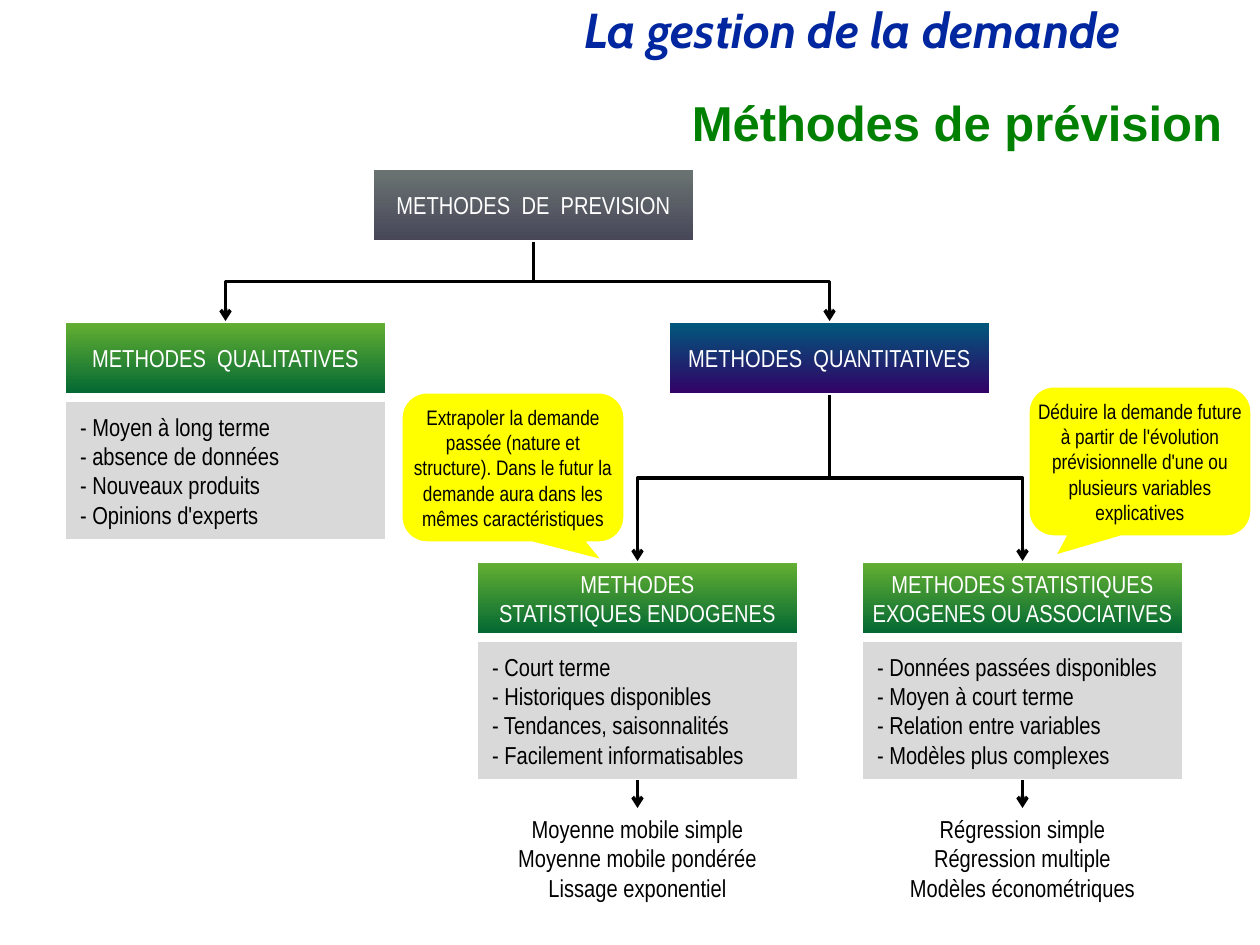
import pptx
import pptx.dml.color
import pptx.enum.shapes
import pptx.enum.text
import pptx.oxml.ns
import pptx.util
from dataclasses import dataclass
from lxml import etree

HEADER = "La gestion de la demande"
TITLE = "Méthodes de prévision"
NODES = {
    "root": dict(at=(372, 168), ramp="grey", head=["METHODES  DE  PREVISION"]),
    "qualitative": dict(
        at=(64, 321), ramp="green", head=["METHODES  QUALITATIVES"],
        details=["- Moyen à long terme", "- absence de données",
                 "- Nouveaux produits", "- Opinions d'experts"]),
    "quantitative": dict(at=(668, 321), ramp="blue", head=["METHODES  QUANTITATIVES"]),
    "endogenous": dict(
        at=(476, 561), ramp="green", head=["METHODES", "STATISTIQUES ENDOGENES"],
        details=["- Court terme", "- Historiques disponibles",
                 "- Tendances, saisonnalités", "- Facilement informatisables"],
        techniques=["Moyenne mobile simple\vMoyenne mobile pondérée", "Lissage exponentiel"]),
    "exogenous": dict(
        at=(861, 561), ramp="green",
        head=["METHODES STATISTIQUES", "EXOGENES OU ASSOCIATIVES"],
        details=["- Données passées disponibles", "- Moyen à court terme",
                 "- Relation entre variables", "- Modèles plus complexes"],
        techniques=["Régression simple\vRégression multiple", "Modèles économétriques"]),
}
BRANCHES = [("root", "qualitative"), ("root", "quantitative"),
            ("quantitative", "endogenous"), ("quantitative", "exogenous")]
CALLOUTS = [
    ((1029, 387), (-0.38, 0.63), "Déduire la demande future à partir de l'évolution "
     "prévisionnelle d'une ou plusieurs variables explicatives"),
    ((402, 393), (0.4, 0.62), "Extrapoler la demande passée (nature et structure). Dans le "
     "futur la demande aura dans les mêmes caractéristiques"),
]


@dataclass(frozen=True)
class Theme:
    header: str = "00279F"
    title: str = "008000"
    ink: str = "000000"
    paper: str = "FFFFFF"
    panel: str = "D9D9D9"
    callout: str = "FFFF00"
    grey: tuple = ("6C7472", "464658")
    green: tuple = ("66B132", "006633")
    blue: tuple = ("005A7C", "330066")
    narrow: str = "Arial Narrow"
    heading_size: int = 28
    body_size: int = 14
    note_size: int = 12
    frame: float = 2.25
    thin: float = 0.75
    arrow: float = 2


THEME = Theme()
PX = 914400 / 126
NODE_W, NODE_H = 323, 74
DETAILS_DROP, DETAILS_H = 79, 141
TECHNIQUES_DROP, TECHNIQUES_W, TECHNIQUES_H = 247, 348, 102
ARROW_DROP = 219
CALLOUT_W, CALLOUT_H = 222, 149
CENTER = pptx.enum.text.PP_ALIGN.CENTER
LEFT = pptx.enum.text.PP_ALIGN.LEFT
RIGHT = pptx.enum.text.PP_ALIGN.RIGHT
TOP = pptx.enum.text.MSO_ANCHOR.TOP
MIDDLE = pptx.enum.text.MSO_ANCHOR.MIDDLE


def emu(*lengths):
    return [round(length * PX) for length in lengths]


def rgb(code):
    return pptx.dml.color.RGBColor.from_string(code)


def write(holder, lines, *, size=THEME.body_size, font=THEME.narrow, color=THEME.ink,
          bold=False, italic=False, align=CENTER, anchor=MIDDLE, pad=(10, 6),
          wrap=True, indent=0, spacing=None):
    frame = holder.text_frame
    frame.auto_size = pptx.enum.text.MSO_AUTO_SIZE.NONE
    frame.word_wrap = wrap
    frame.vertical_anchor = anchor
    frame.margin_left, frame.margin_top = emu(*pad)
    frame.margin_right, frame.margin_bottom = emu(*pad)
    for index, line in enumerate(lines):
        paragraph = frame.add_paragraph() if index else frame.paragraphs[0]
        paragraph.text = line
        paragraph.alignment = align
        paragraph.line_spacing = spacing
        if indent:
            properties = paragraph._p.get_or_add_pPr()
            properties.set("marL", str(emu(indent)[0]))
            properties.set("indent", "0")
        for run in paragraph.runs:
            run.font.name, run.font.size = font, pptx.util.Pt(size)
            run.font.bold, run.font.italic = bold, italic
            run.font.color.rgb = rgb(color)


def add_block(slide, kind, box, fill, frame):
    block = slide.shapes.add_shape(kind, *emu(*box))
    block.shadow.inherit = False
    if isinstance(fill, tuple):
        block.fill.gradient()
        block.fill.gradient_angle = 270
        for stop, code in zip(block.fill.gradient_stops, fill):
            stop.color.rgb = rgb(code)
    else:
        block.fill.solid()
        block.fill.fore_color.rgb = rgb(fill)
    block.line.color.rgb = rgb(THEME.paper)
    block.line.width = pptx.util.Pt(frame)
    return block


def add_arrow(slide, kind, start, end):
    arrow = slide.shapes.add_connector(kind, *emu(*start, *end))
    arrow.line.color.rgb = rgb(THEME.ink)
    arrow.line.width = pptx.util.Pt(THEME.arrow)
    qn = pptx.oxml.ns.qn
    etree.SubElement(arrow.line._get_or_add_ln(), qn("a:tailEnd"), type="arrow")
    etree.SubElement(arrow._element.spPr, qn("a:effectLst"))
    return arrow


def add_branch(slide, parent, child):
    (x1, y1), (x2, y2) = NODES[parent]["at"], NODES[child]["at"]
    x1, x2, y1 = x1 + NODE_W / 2, x2 + NODE_W / 2, y1 + NODE_H
    cx, cy = (x1 + x2) / 2, (y1 + y2) / 2
    side = 1 if x2 < x1 else -1
    run, rise = side * (y2 - y1) / 2, abs(x2 - x1) / 2
    branch = add_arrow(slide, pptx.enum.shapes.MSO_CONNECTOR.ELBOW,
                       (cx - run, cy - rise), (cx + run, cy + rise))
    turn = 90 if side == 1 else 270
    branch._element.spPr.find(pptx.oxml.ns.qn("a:xfrm")).set("rot", str(turn * 60000))


def add_node(slide, at, ramp, head, details=(), techniques=()):
    left, top = at
    rectangle = pptx.enum.shapes.MSO_SHAPE.RECTANGLE
    heading = add_block(slide, rectangle, (left, top, NODE_W, NODE_H),
                        getattr(THEME, ramp), THEME.frame)
    write(heading, head, color=THEME.paper, wrap=False)
    if details:
        panel = add_block(slide, rectangle, (left, top + DETAILS_DROP, NODE_W, DETAILS_H),
                          THEME.panel, THEME.frame)
        write(panel, details, align=LEFT, indent=6)
    if techniques:
        center = left + NODE_W / 2
        outcome = slide.shapes.add_textbox(*emu(
            center - TECHNIQUES_W / 2, top + TECHNIQUES_DROP, TECHNIQUES_W, TECHNIQUES_H))
        write(outcome, techniques, anchor=TOP)
        add_arrow(slide, pptx.enum.shapes.MSO_CONNECTOR.STRAIGHT,
                  (center, top + ARROW_DROP), (center, top + TECHNIQUES_DROP))


def main():
    deck = pptx.Presentation()
    deck.slide_width, deck.slide_height = emu(1260, 945)
    slide = deck.slides.add_slide(deck.slide_layouts[5])

    header = slide.shapes.add_textbox(*emu(571, 0, 660, 67))
    write(header, [HEADER], size=THEME.heading_size, font="Cabin", color=THEME.header,
          bold=True, italic=True, align=LEFT, anchor=TOP, pad=(13, 6), wrap=False, spacing=0.9)
    title = slide.shapes.title
    title.left, title.top, title.width, title.height = emu(101, 93, 1134, 118)
    write(title, [TITLE], size=THEME.heading_size, font="Arial", color=THEME.title,
          bold=True, align=RIGHT, anchor=TOP, pad=(13, 6), spacing=0.9)

    for node in NODES.values():
        add_node(slide, **node)
    for parent, child in BRANCHES:
        add_branch(slide, parent, child)
    for at, tip, note in CALLOUTS:
        callout = add_block(slide, pptx.enum.shapes.MSO_SHAPE.ROUNDED_RECTANGULAR_CALLOUT,
                            (*at, CALLOUT_W, CALLOUT_H), THEME.callout, THEME.thin)
        callout.adjustments[0], callout.adjustments[1] = tip
        write(callout, [note], size=THEME.note_size, pad=(0, 0))
    deck.save("out.pptx")


if __name__ == "__main__":
    main()
